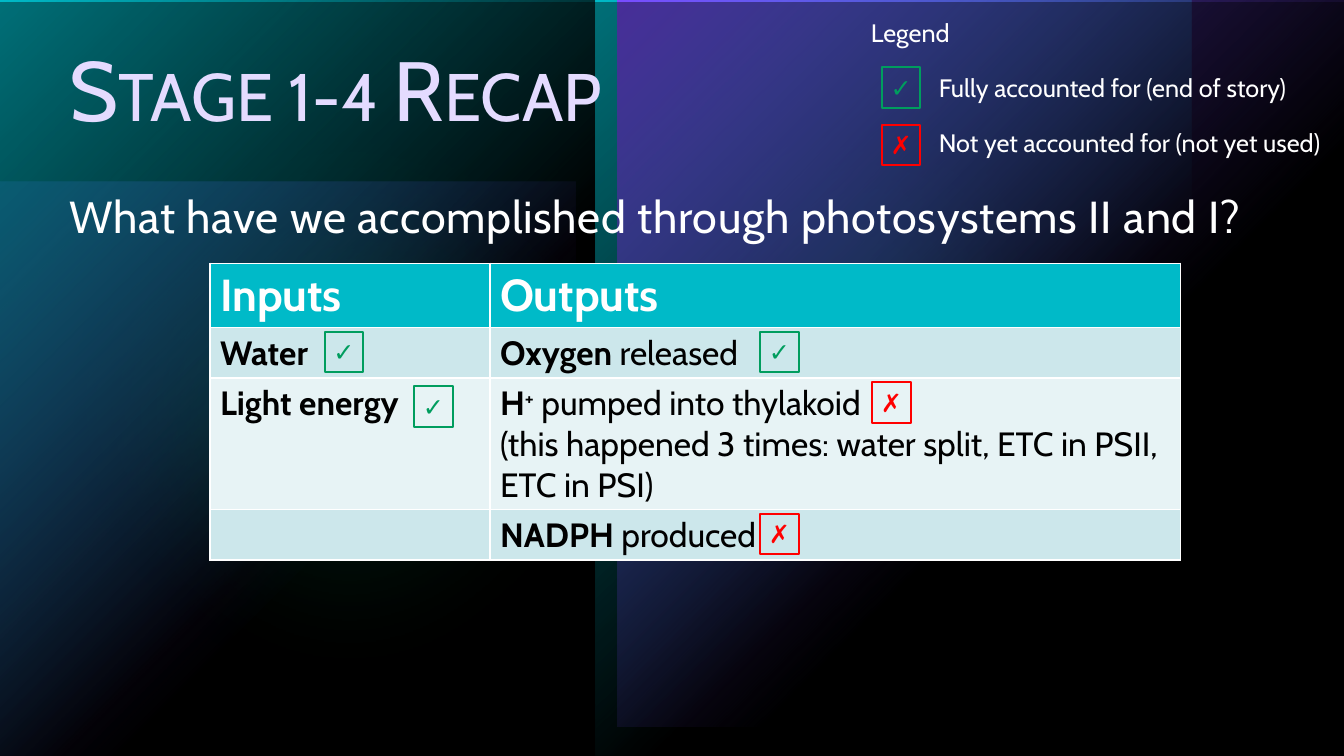
from pptx import Presentation
from pptx.util import Pt
from pptx.dml.color import RGBColor as Rgb
from pptx.enum.shapes import MSO_SHAPE as Kind
from pptx.enum.text import MSO_ANCHOR as Anchor, PP_ALIGN as Align
from pptx.oxml import parse_xml as to_xml
from pptx.oxml.ns import nsdecls, qn
from lxml.etree import SubElement as Sub

WHITE = Rgb(255, 255, 255)
BLACK = Rgb(0, 0, 0)
LILAC = Rgb(0xE4, 0xDB, 0xFF)
TEAL = Rgb(0x00, 0xBA, 0xC8)
VIOLET = Rgb(0x79, 0x4D, 0xFF)
MINT = Rgb(0x00, 0xD1, 0x7D)
GREEN = Rgb(0x00, 0x9D, 0x5E)
RED = Rgb(255, 0, 0)
BANDS = Rgb(0xE7, 0xF3, 0xF5), Rgb(0xCC, 0xE7, 0xEB)


class Board:
    font = "Cabin"

    def __init__(self, deck):
        self.slide = deck.slides.add_slide(deck.slide_layouts[6])
        fill = self.slide.background.fill
        fill.solid()
        fill.fore_color.rgb = BLACK

    def run(self, para, text, color, **form):
        run = para.add_run()
        run.text = text
        run.font.color.rgb = color
        for key, val in {"name": self.font, **form}.items():
            setattr(run.font, key, val)
        return run.font

    def shape(self, kind, *box):
        item = self.slide.shapes.add_shape(kind, *map(Pt, box))
        item.shadow.inherit = False
        item.line.fill.background()
        return item

    def tint(self, kind, box, color, alpha, soft=0):
        item = self.shape(kind, *box)
        item.fill.solid()
        item.fill.fore_color.rgb = color
        props = item.element.spPr
        Sub(props.find(".//" + qn("a:srgbClr")), qn("a:alpha"), val=str(alpha * 1000))
        if soft:
            Sub(props.find(qn("a:effectLst")), qn("a:softEdge"), rad=str(Pt(soft)))

    def glow(self, box, color, alpha=100):
        item = self.shape(Kind.RECTANGLE, *box)
        item.fill.gradient()
        stops = "".join(
            f'<a:gs pos="{pos}000"><a:srgbClr val="{color}">'
            f'<a:alpha val="{val}000"/></a:srgbClr></a:gs>'
            for pos, val in ((0, alpha), (60, 0)))
        grad = to_xml(
            f'<a:gradFill {nsdecls("a")} rotWithShape="1"><a:gsLst>{stops}</a:gsLst>'
            '<a:path path="circle"><a:fillToRect r="100000" b="100000"/></a:path>'
            '</a:gradFill>')
        props = item.element.spPr
        props.replace(props.find(qn("a:gradFill")), grad)

    def text(self, box, lines, color, size, anchor=Anchor.TOP, **form):
        frame = self.slide.shapes.add_textbox(*map(Pt, box)).text_frame
        frame.word_wrap = True
        frame.vertical_anchor = anchor
        for num, line in enumerate(lines):
            para = frame.paragraphs[0] if num == 0 else frame.add_paragraph()
            for key, val in form.items():
                setattr(para, key, val)
            font = self.run(para, line, color, size=Pt(size))
        return frame, font

    def mark(self, left, top, done):
        sign, color, font = ("✓", GREEN, "Lato") if done else ("✗", RED, "Cabin")
        item = self.shape(Kind.RECTANGLE, left, top, 27.5, 29)
        item.fill.background()
        item.line.color.rgb = color
        item.line.width = Pt(1.5)
        frame = item.text_frame
        frame.word_wrap = False
        frame.vertical_anchor = Anchor.TOP
        para = frame.paragraphs[0]
        para.alignment = Align.CENTER
        self.run(para, sign, color, name=font, size=Pt(18), bold=True)

    def table(self, left, top, cols, rows, cells):
        box = map(Pt, (left, top, sum(cols), sum(rows)))
        grid = self.slide.shapes.add_table(len(rows), len(cols), *box).table
        for col, width in zip(grid.columns, cols):
            col.width = Pt(width)
        for num, (row, high) in enumerate(zip(grid.rows, rows)):
            row.height = Pt(high)
            for cell, runs in zip(row.cells, cells[num]):
                cell.fill.solid()
                cell.fill.fore_color.rgb = BANDS[num % 2] if num else TEAL
                para = cell.text_frame.paragraphs[0]
                for text, bold, base in runs:
                    if text == "\n":
                        para.add_line_break()
                        continue
                    font = self.run(para, text, BLACK if num else WHITE,
                                    size=Pt(24 if num else 32), bold=bold)
                    if base:
                        font._element.set("baseline", str(base * 1000))


def bold(text):
    return text, True, 0


def plain(text):
    return text, False, 0


def main():
    deck = Presentation()
    deck.slide_width, deck.slide_height = Pt(960), Pt(540)
    board = Board(deck)

    board.glow((0, 129.5, 411, 411), VIOLET, 60)
    board.tint(Kind.OVAL, (453, 31, 340, 340), MINT, 60, 100)
    board.tint(Kind.OVAL, (0, 40, 500, 500), MINT, 20, 100)
    for left in (0, 425.5):
        board.glow((left, 0, 425.5, 540), TEAL)
    board.glow((441, 0, 519, 519), VIOLET)
    board.tint(Kind.RECTANGLE, (0, 1.5, 960, 540), BLACK, 40)

    font = board.text((42.5, 31, 874, 73), ["Stage 1-4 Recap"], LILAC, 60,
                      Anchor.MIDDLE, line_spacing=0.9)[1]
    font._element.set("cap", "small")
    font = board.text((42.5, 121.5, 874, 302),
                      ["What have we accomplished through photosystems II and I?"],
                      WHITE, 32, line_spacing=1.25, space_before=Pt(10))[1]
    font._element.set("spc", "50")

    board.table(150, 188, (200, 493), (46, 36, 94, 36), (
        ([bold("Inputs")], [bold("Outputs")]),
        ([bold("Water")], [bold("Oxygen"), plain(" released")]),
        ([bold("Light energy")],
         [bold("H"), ("+", True, 30), plain(" pumped into thylakoid"), plain("\n"),
          plain("(this happened 3 times: water split, ETC in PSII, ETC in PSI)")]),
        ([], [bold("NADPH"), plain(" produced")])))

    frame = board.text((615, 8.5, 345, 109),
                       ["Legend", "Fully accounted for (end of story)",
                        "Not yet accounted for (not yet used)"],
                       WHITE, 18, space_after=Pt(18))[0]
    for para in frame.paragraphs[1:]:
        para._p.get_or_add_pPr().set("marL", str(Pt(48.5)))

    for left, top, done in ((232, 237, True), (296, 276, True), (543, 237, True),
                            (623, 273, False), (543, 367, False),
                            (630, 89, False), (630, 48, True)):
        board.mark(left, top, done)

    deck.save("out.pptx")


if __name__ == "__main__":
    main()
